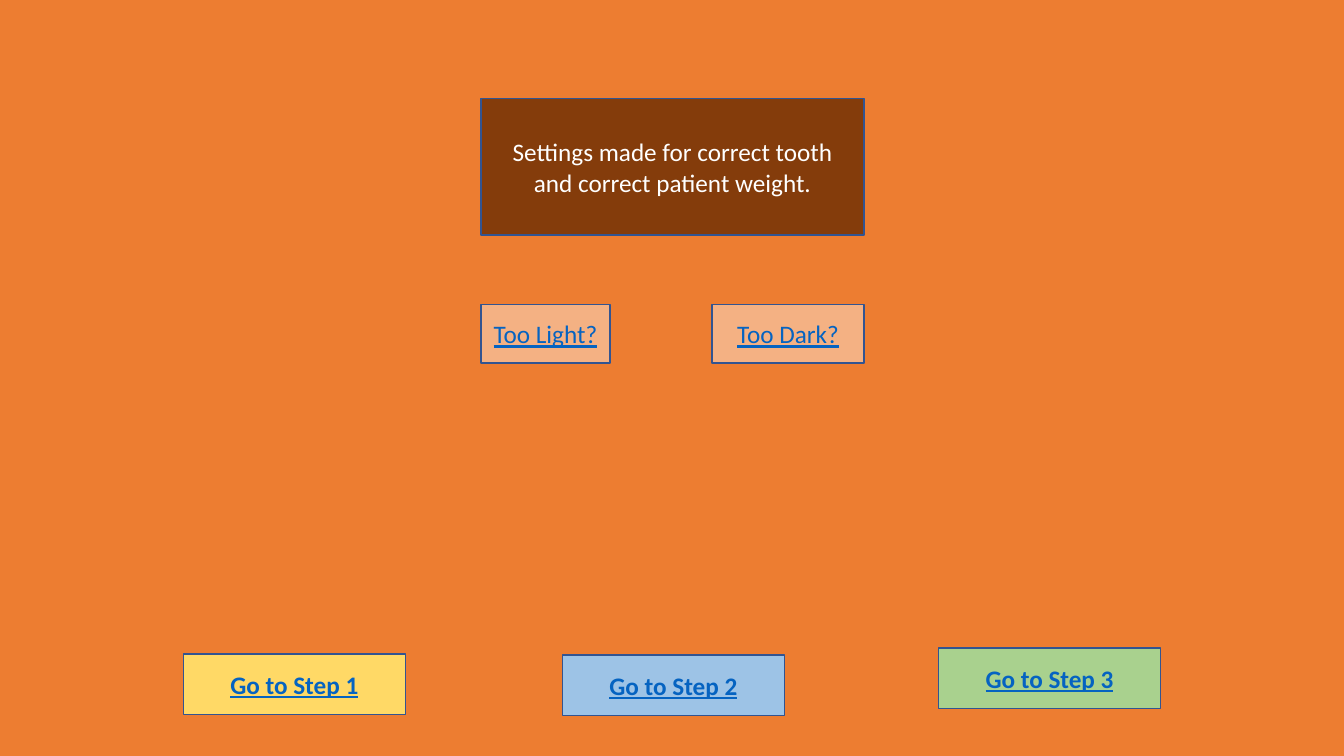
from pptx import Presentation
from pptx.dml.color import RGBColor
from pptx.enum.shapes import MSO_SHAPE as Preset
from pptx.enum.text import MSO_ANCHOR as Anchor, PP_ALIGN as Align
from pptx.util import Inches, Pt

COLORS = {
    "background": "ED7D31",
    "outline": "325491",
    "statement": "843C0B",
    "choice": "F4B183",
    "step 1": "FFD966",
    "step 2": "9DC3E6",
    "step 3": "A9D18E",
    "white": "FFFFFF",
    "link": "0563C1",
}


def color(name):
    return RGBColor.from_string(COLORS[name])


def add_box(page, preset, left, top, width, height, text, fill, text_color):
    """Add an outlined box with centred text and return the text's font."""
    box = page.shapes.add_shape(
        preset, Inches(left), Inches(top), Inches(width), Inches(height))
    box.shadow.inherit = False
    box.fill.solid()
    box.fill.fore_color.rgb = color(fill)
    box.line.color.rgb = color("outline")
    box.line.width = Pt(1)
    frame = box.text_frame
    frame.word_wrap = True
    frame.vertical_anchor = Anchor.MIDDLE
    frame.text = text
    para = frame.paragraphs[0]
    para.alignment = Align.CENTER
    font = para.runs[0].font
    font.name = "Calibri"
    font.size = Pt(18)
    font.color.rgb = color(text_color)
    return font


def add_choice(page, left, width, text):
    font = add_box(page, Preset.FLOWCHART_PROCESS, left, 3.02, width, 0.58,
                   text, "choice", "link")
    font.underline = True


def add_step_button(page, number, left, top):
    font = add_box(page, Preset.RECTANGLE, left, top, 2.2, 0.6,
                   f"Go to Step {number}", f"step {number}", "link")
    font.bold = True
    font.underline = True


def main():
    deck = Presentation()
    deck.slide_width = Inches(13.33)
    deck.slide_height = Inches(7.5)
    page = deck.slides.add_slide(deck.slide_layouts[6])
    page.background.fill.solid()
    page.background.fill.fore_color.rgb = color("background")

    add_box(page, Preset.FLOWCHART_PROCESS, 4.77, 0.98, 3.8, 1.35,
            "Settings made for correct tooth and correct patient weight.",
            "statement", "white")
    add_choice(page, 4.77, 1.28, "Too Light?")
    add_choice(page, 7.06, 1.51, "Too Dark?")
    step_places = [(1.82, 6.49), (5.58, 6.5), (9.31, 6.43)]
    for number, (left, top) in enumerate(step_places, start=1):
        add_step_button(page, number, left, top)

    deck.save("out.pptx")


if __name__ == "__main__":
    main()
